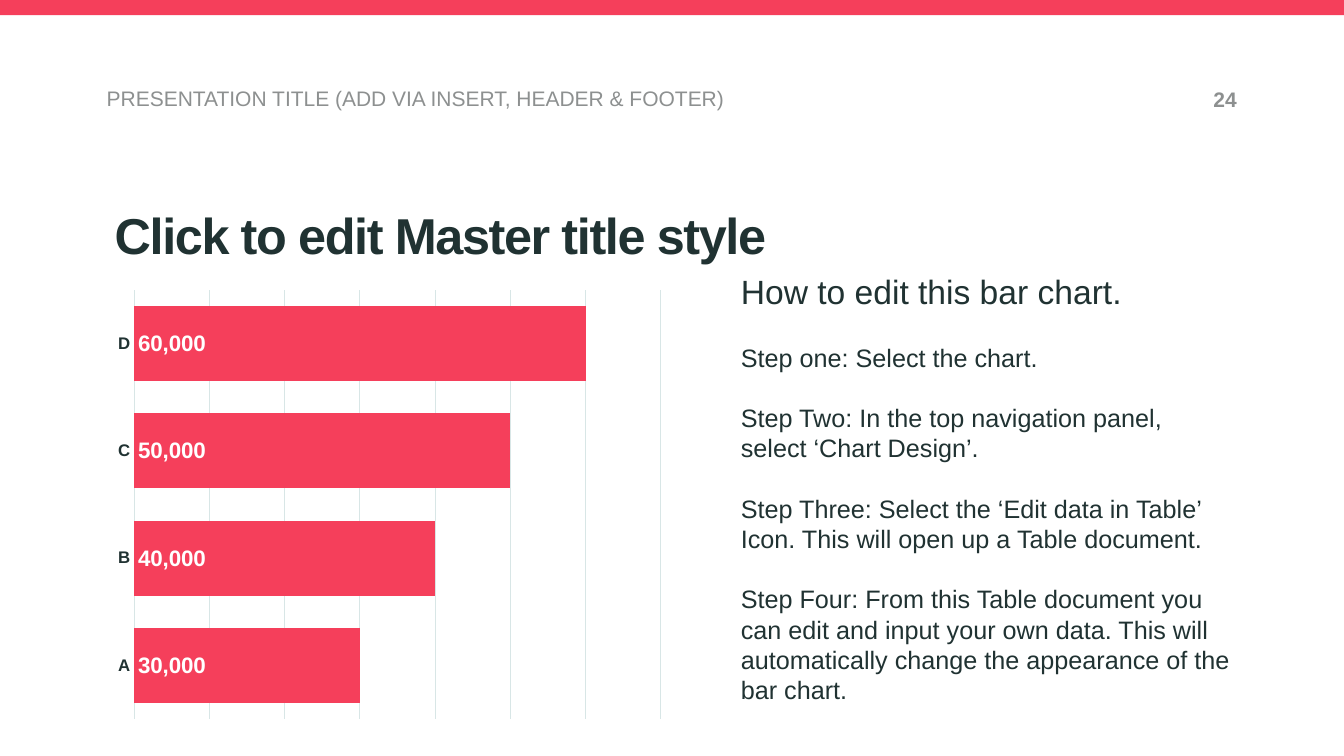
import pptx
import pptx.chart.data
import pptx.dml.color
import pptx.enum.chart
import pptx.enum.shapes
import pptx.enum.text
import pptx.util
from pptx.util import Cm, Pt

RED = pptx.dml.color.RGBColor(0xF5, 0x3F, 0x5B)
DARK = pptx.dml.color.RGBColor(0x20, 0x32, 0x32)
GREY = pptx.dml.color.RGBColor(0x8D, 0x90, 0x90)
PALE = pptx.dml.color.RGBColor(0xD8, 0xE6, 0xE6)
WHITE = pptx.dml.color.RGBColor(0xFF, 0xFF, 0xFF)
ALIGN = pptx.enum.text.PP_ALIGN


def set_font(font, size, color, bold=False):
    for name, value in {"name": "Arial", "size": Pt(size), "bold": bold}.items():
        setattr(font, name, value)
    font.color.rgb = color


def set_frame(s, box, inset):
    for name, value in zip(("left", "top", "width", "height"), box):
        setattr(s, name, Cm(value))
    tf = s.text_frame
    frame = {
        "word_wrap": True,
        "auto_size": pptx.enum.text.MSO_AUTO_SIZE.NONE,
        "vertical_anchor": pptx.enum.text.MSO_ANCHOR.TOP,
        "margin_left": Cm(inset),
        "margin_right": Cm(inset),
        "margin_top": Cm(inset / 2),
        "margin_bottom": Cm(inset / 2),
    }
    for name, value in frame.items():
        setattr(tf, name, value)
    return tf


prs = pptx.Presentation()
prs.slide_width, prs.slide_height = Cm(33.87), Cm(19.05)
slide = prs.slides.add_slide(prs.slide_layouts[1])

band = slide.shapes.add_shape(
    pptx.enum.shapes.MSO_SHAPE.RECTANGLE, 0, 0, prs.slide_width, Cm(0.38))
band.shadow.inherit = False
band.fill.solid()
band.fill.fore_color.rgb = RED
band.line.fill.background()

headers = [
    ("PRESENTATION TITLE (ADD VIA INSERT, HEADER & FOOTER)",
     (2.69, 2.16, 19.94, 0.64), ALIGN.LEFT, False),
    ("24", (27.28, 2.18, 3.89, 0.64), ALIGN.RIGHT, True),
]
for text, box, align, bold in headers:
    tf = set_frame(slide.shapes.add_textbox(0, 0, 0, 0), box, 0)
    p = tf.paragraphs[0]
    p.alignment = align
    r = p.add_run()
    r.text = text
    set_font(r.font, 15, GREY, bold)

tf = set_frame(slide.shapes.title, (2.64, 5.26, 28.55, 1.02), 0.25)
p = tf.paragraphs[0]
p.alignment = ALIGN.LEFT
p.line_spacing = Pt(36)
r = p.add_run()
r.text = "Click to edit Master title style"
set_font(r.font, 36, DARK, True)
r.font._element.set("spc", "-100")

data = pptx.chart.data.CategoryChartData(number_format="#,##0")
data.categories = ["A", "B", "C", "D"]
data.add_series("Series 1", [30000, 40000, 50000, 60000])
chart = slide.shapes.add_chart(
    pptx.enum.chart.XL_CHART_TYPE.BAR_CLUSTERED,
    Cm(2.69), Cm(7.09), Cm(14.25), Cm(11.25), data).chart
chart.has_title = False
chart.has_legend = False
set_font(chart.font, 10, DARK)

cat_axis = chart.category_axis
cat_axis.major_tick_mark = pptx.enum.chart.XL_TICK_MARK.NONE
set_font(cat_axis.tick_labels.font, 12, DARK, True)
val_axis = chart.value_axis
axis_format = {
    "visible": False,
    "has_major_gridlines": True,
    "minimum_scale": 0,
    "maximum_scale": 70000,
    "major_unit": 10000,
}
for name, value in axis_format.items():
    setattr(val_axis, name, value)
for line in (cat_axis.format.line, val_axis.major_gridlines.format.line):
    line.color.rgb = PALE
    line.width = Pt(0.75)

plot = chart.plots[0]
plot.vary_by_categories = False
plot.gap_width = 43
plot.overlap = 100
bars = plot.series[0]
bars.format.fill.solid()
bars.format.fill.fore_color.rgb = RED
labels = bars.data_labels
label_format = {
    "show_value": True,
    "position": pptx.enum.chart.XL_LABEL_POSITION.INSIDE_BASE,
    "number_format": "#,##0",
    "number_format_is_linked": False,
}
for name, value in label_format.items():
    setattr(labels, name, value)
set_font(labels.font, 16, WHITE, True)

steps = [
    ("How to edit this bar chart.", 24, 0),
    ("Step one: Select the chart.", 18, 21.6),
    ("Step Two: In the top navigation panel,", 18, 21.6),
    ("select ‘Chart Design’.", 18, 0),
    ("Step Three: Select the ‘Edit data in Table’ Icon. "
     "This will open up a Table document.", 18, 21.6),
    ("Step Four: From this Table document you can edit and input your own data. "
     "This will automatically change the appearance of the bar chart.", 18, 21.6),
]
tf = set_frame(slide.placeholders[1], (18.67, 7.09, 12.52, 11.25), 0)
for i, (text, size, gap) in enumerate(steps):
    p = tf.add_paragraph() if i else tf.paragraphs[0]
    p.alignment = ALIGN.LEFT
    p.line_spacing = Pt(21.6)
    p.space_before = Pt(gap)
    pPr = p._p.get_or_add_pPr()
    pPr.set("marL", "0")
    pPr.set("indent", "0")
    pPr.append(pptx.oxml.parse_xml(
        '<a:buNone xmlns:a="http://schemas.openxmlformats.org/drawingml/2006/main"/>'))
    r = p.add_run()
    r.text = text
    set_font(r.font, size, DARK)

prs.save("out.pptx")
